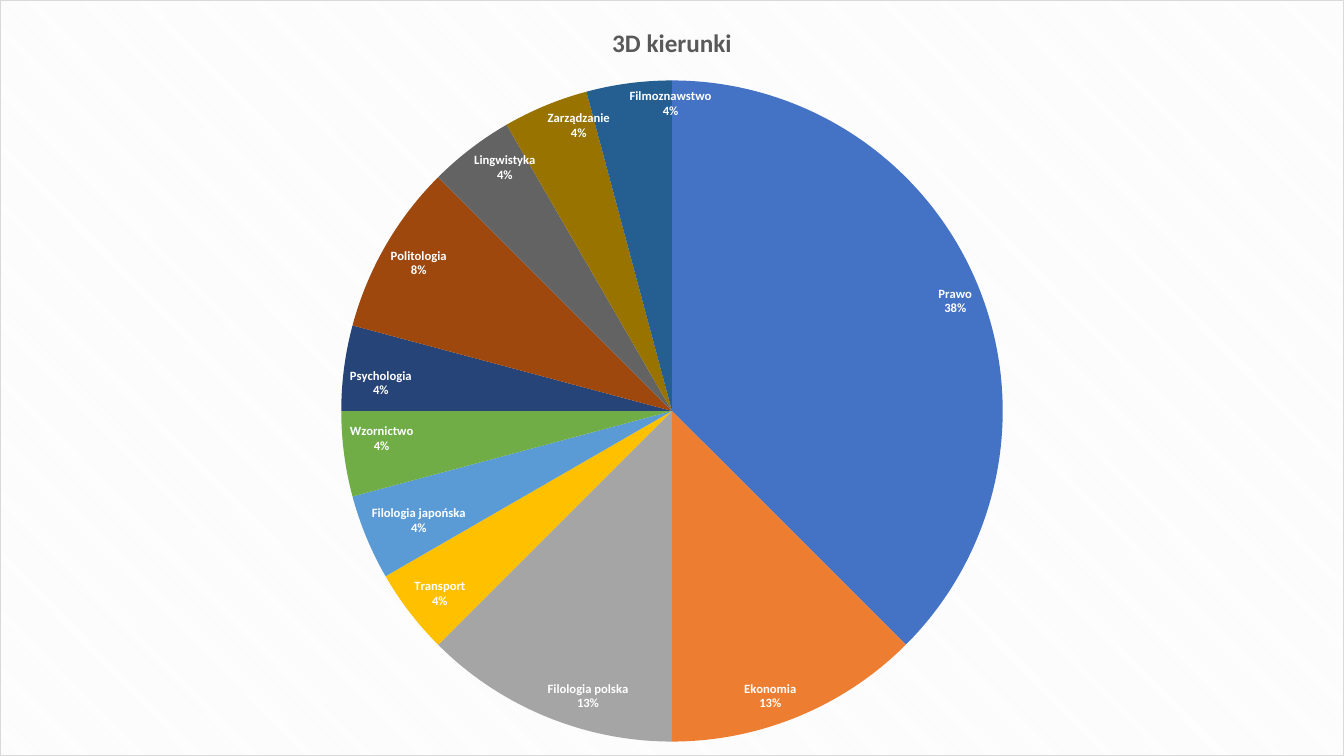
from lxml import etree
from pptx import Presentation
from pptx import util as u
from pptx.chart.data import CategoryChartData
from pptx.dml.color import RGBColor
from pptx.enum import chart as charts
from pptx.oxml import parse_xml
from pptx.oxml.ns import qn

TITLE = "3D kierunki"
FIELDS = [
    ("Prawo", 36, "4472C4"),
    ("Ekonomia", 12, "ED7D31"),
    ("Filologia polska", 12, "A5A5A5"),
    ("Transport", 4, "FFC000"),
    ("Filologia japońska", 4, "5B9BD5"),
    ("Wzornictwo", 4, "70AD47"),
    ("Psychologia", 4, "264478"),
    ("Politologia", 8, "9E480E"),
    ("Lingwistyka", 4, "636363"),
    ("Zarządzanie", 4, "997300"),
    ("Filmoznawstwo", 4, "255E91"),
]
COLOURS = {"title": "595959", "label": "FFFFFF", "stripe": "F2F2F2",
           "paper": "FFFFFF", "border": "D9D9D9"}
LABELS = {"show_percentage": True, "show_category_name": True, "show_value": False,
          "show_legend_key": False, "number_format": "0%", "number_format_is_linked": False,
          "position": charts.XL_LABEL_POSITION.INSIDE_END}
WIDTH, HEIGHT = u.Cm(33.87), u.Cm(19.05)
NAMESPACES = ('xmlns:c="http://schemas.openxmlformats.org/drawingml/2006/chart" '
              'xmlns:a="http://schemas.openxmlformats.org/drawingml/2006/main"')


def set_font(font, size, colour):
    for name, value in {"name": "Calibri", "size": u.Pt(size), "bold": True}.items():
        setattr(font, name, value)
    font.color.rgb = RGBColor.from_string(COLOURS[colour])


def add_background(chart):
    background = parse_xml(
        f'<c:spPr {NAMESPACES}><a:pattFill prst="dkDnDiag">'
        f'<a:fgClr><a:srgbClr val="{COLOURS["stripe"]}"/></a:fgClr>'
        f'<a:bgClr><a:srgbClr val="{COLOURS["paper"]}"/></a:bgClr></a:pattFill>'
        f'<a:ln w="{u.Pt(0.75)}"><a:solidFill><a:srgbClr val="{COLOURS["border"]}"/>'
        '</a:solidFill></a:ln></c:spPr>')
    chart.element.find(qn("c:chart")).addnext(background)


def add_labels(plot):
    labels = plot.series[0].data_labels
    for name, value in LABELS.items():
        setattr(labels, name, value)
    set_font(labels.font, 9, "label")
    separator = etree.Element(qn("c:separator"))
    separator.text = "\n"
    labels._element.find(qn("c:showBubbleSize")).addnext(separator)


def main():
    presentation = Presentation()
    presentation.slide_width, presentation.slide_height = WIDTH, HEIGHT
    slide = presentation.slides.add_slide(presentation.slide_layouts[6])

    data = CategoryChartData()
    data.categories = [name for name, _, _ in FIELDS]
    data.add_series("Series 1", [share for _, share, _ in FIELDS])
    chart = slide.shapes.add_chart(
        charts.XL_CHART_TYPE.PIE, 0, 0, WIDTH, HEIGHT, data).chart
    chart.font.name, chart.font.size = "Calibri", u.Pt(10)
    chart.has_legend = False
    chart.has_title = True
    chart.chart_title.include_in_layout = False
    chart.chart_title.text_frame.text = TITLE
    set_font(chart.chart_title.text_frame.paragraphs[0].runs[0].font, 18, "title")

    plot = chart.plots[0]
    plot.vary_by_categories = True
    for index, (_, _, colour) in enumerate(FIELDS):
        fill = plot.series[0].points[index].format.fill
        fill.solid()
        fill.fore_color.rgb = RGBColor.from_string(colour)
    add_labels(plot)
    add_background(chart)
    presentation.save("out.pptx")


if __name__ == "__main__":
    main()
